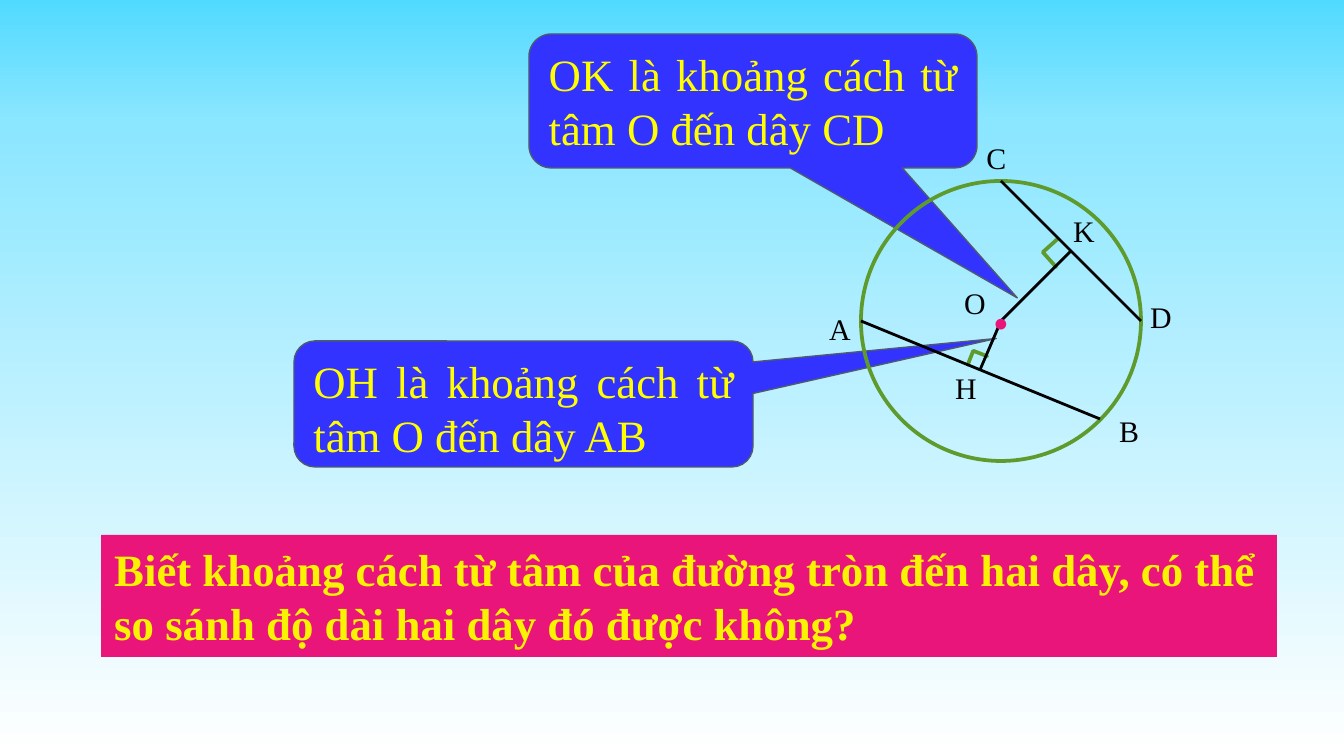
from copy import deepcopy

from pptx import Presentation
from pptx.dml.color import RGBColor
from pptx.enum.shapes import MSO_CONNECTOR, MSO_SHAPE
from pptx.enum.text import MSO_ANCHOR, PP_ALIGN
from pptx.oxml.ns import qn
from pptx.util import Pt
from lxml import etree

RECT, OVAL = MSO_SHAPE.RECTANGLE, MSO_SHAPE.OVAL
CALLOUT, CORNER = MSO_SHAPE.ROUNDED_RECTANGULAR_CALLOUT, MSO_SHAPE.HALF_FRAME
LINE = MSO_CONNECTOR.STRAIGHT
TOP, LEFT, JUSTIFY = MSO_ANCHOR.TOP, PP_ALIGN.LEFT, PP_ALIGN.JUSTIFY

SKY = RGBColor(0x51, 0xDA, 0xFF)
PALE = RGBColor(0x8B, 0xE6, 0xFF)
WHITE = RGBColor(0xFF, 0xFF, 0xFF)
PINK = RGBColor(0xEA, 0x15, 0x7A)
GOLD = RGBColor(0xF9, 0xF3, 0x03)
YELLOW = RGBColor(0xFF, 0xFF, 0x00)
BLUE = RGBColor(0x33, 0x33, 0xFF)
SLATE = RGBColor(0x4E, 0x5B, 0x6F)
GREEN = RGBColor(0x5E, 0x9B, 0x2C)
BLACK = RGBColor(0x00, 0x00, 0x00)
PX = 914400 / 134.4


def add_shape(kind, box, fill=None, line=None, width=2):
    shape = slide.shapes.add_shape(kind, *[round(v * PX) for v in box])
    shape.shadow.inherit = False
    if fill is None:
        shape.fill.background()
    else:
        shape.fill.solid()
        shape.fill.fore_color.rgb = fill
    if line is None:
        shape.line.fill.background()
    else:
        shape.line.color.rgb = line
        shape.line.width = Pt(width)
    return shape


def write(shape, text, size, color, align=LEFT, bold=False, wrap=True):
    frame = shape.text_frame
    frame.word_wrap = wrap
    frame.vertical_anchor = TOP
    para = frame.paragraphs[0]
    para.text = text
    para.alignment = align
    para.font.name = "Times New Roman"
    para.font.size = Pt(size)
    para.font.bold = bold
    para.font.color.rgb = color


prs = Presentation()
prs.slide_width, prs.slide_height = round(1344 * PX), round(756 * PX)
slide = prs.slides.add_slide(prs.slide_layouts[6])

# Background gradient with three stops
back = slide.background.fill
back.gradient()
back.gradient_angle = 270
stops = slide.element.find(".//" + qn("a:gsLst"))
stops.append(deepcopy(stops[-1]))
for stop, (pos, color) in zip(back.gradient_stops, [(0, SKY), (0.16, PALE), (1, WHITE)]):
    stop.position = pos
    stop.color.rgb = color

# Question
banner = add_shape(RECT, (101, 535, 1176, 122), PINK)
write(banner, "Biết khoảng cách từ tâm của đường tròn đến hai dây, "
      "có thể so sánh độ dài hai dây đó được không?", 24, GOLD, bold=True)

# Callouts
for box, tip, text in [
    ((294, 341, 459, 126), (1.03, -0.52), "OH là khoảng cách từ tâm O đến dây AB"),
    ((529, 34, 448, 134), (0.59, 1.47), "OK là khoảng cách từ tâm O đến dây CD"),
]:
    note = add_shape(CALLOUT, box, BLUE, SLATE, 0.75)
    note.adjustments[0], note.adjustments[1] = tip
    write(note, text, 24, YELLOW, JUSTIFY)

# Right angle marks at K and H
for box, turn in [((1047, 243, 20, 20), 318.2), ((970, 353, 15, 15), 21.5)]:
    mark = add_shape(CORNER, box, GREEN, GREEN)
    mark.adjustments[0] = mark.adjustments[1] = 0
    mark.rotation = turn

# Circle, chords and the distances to their midpoints
add_shape(OVAL, (861, 181, 280, 280), line=GREEN)
O, A, B, C, D = (1001, 321), (861, 321), (1100, 419), (1001, 181), (1141, 321)
H, K = (980, 370), (1071, 251)
for start, end in [(C, D), (A, B), (K, O), (O, H)]:
    line = slide.shapes.add_connector(LINE, *[round(v * PX) for v in start + end])
    line.line.color.rgb = BLACK
    line.line.width = Pt(1.5)
    etree.SubElement(line.element.spPr, qn("a:effectLst"))

# Point names and the centre dot
names = [("A", 816, 304), ("B", 1106, 406), ("D", 1137, 292), ("C", 973, 133),
         ("O", 951, 278), ("H", 942, 363), ("K", 1060, 206)]
labels = [(name, x, y, 48, 50, 16, BLACK) for name, x, y in names]
labels.append(("•", 980, 288, 43, 67, 24, PINK))
for text, x, y, w, h, size, color in labels:
    label = slide.shapes.add_textbox(*[round(v * PX) for v in (x, y, w, h)])
    write(label, text, size, color, wrap=False)

prs.save("out.pptx")
